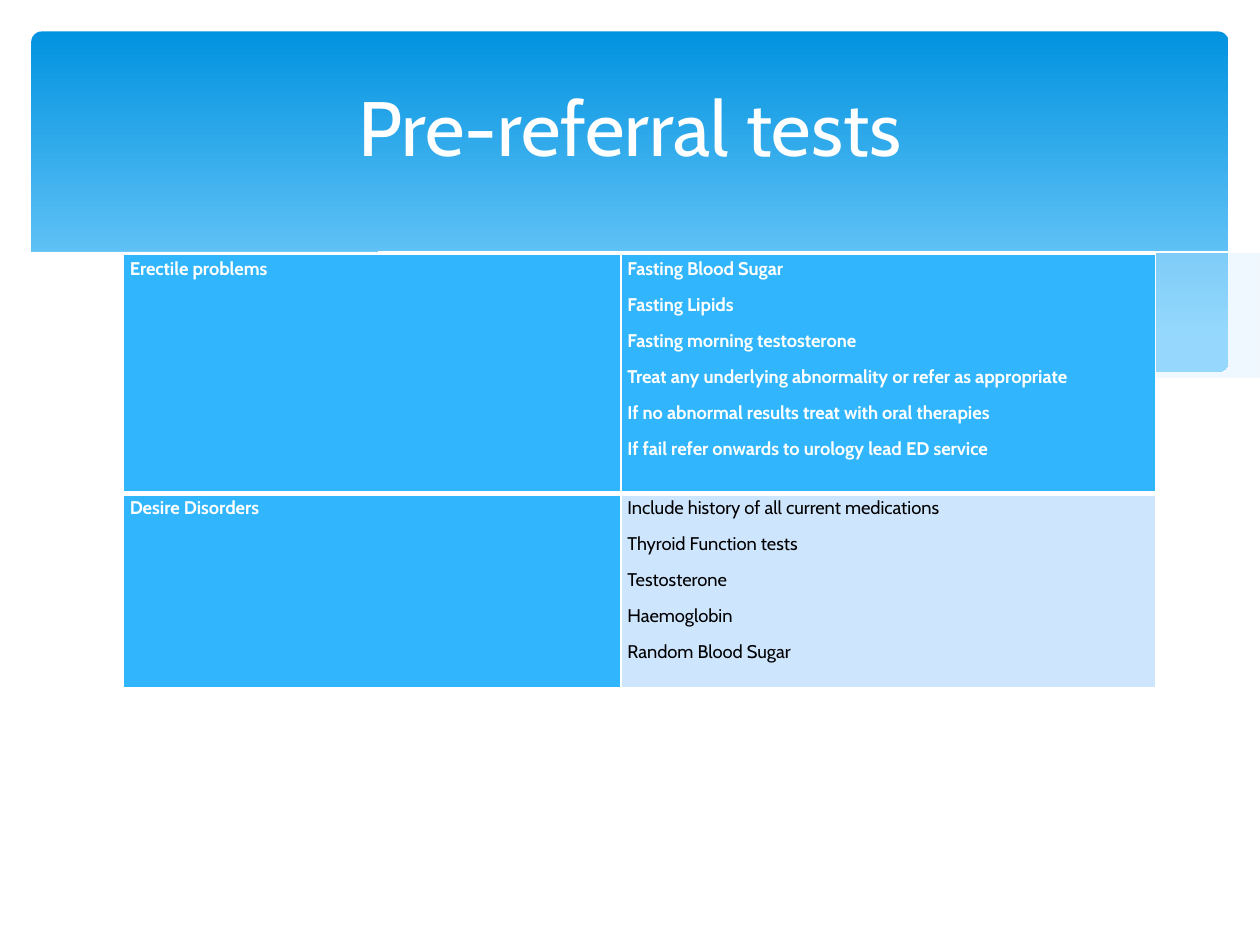
from lxml.etree import SubElement
from pptx import Presentation
from pptx.dml.color import RGBColor
from pptx.enum.shapes import MSO_SHAPE
from pptx.enum.text import MSO_ANCHOR, PP_ALIGN
from pptx.oxml.ns import qn
from pptx.util import Inches, Pt

FONT = "Cabin"
WHITE, BLACK, SKY, PALE, MIST = "FFFFFF", "000000", "31B6FD", "CEE5FE", "C6E7FC"
STEPS = 6


def color(hex_code):
    return RGBColor.from_string(hex_code)


def smooth(knots):
    """Return points of a Catmull-Rom curve through the knots."""
    padded = [knots[0], *knots, knots[-1]]
    points = [knots[0]]
    for a, b, c, d in zip(padded, padded[1:], padded[2:], padded[3:]):
        for step in range(1, STEPS + 1):
            t = step / STEPS
            points.append(tuple(
                (2 * q + (r - p) * t + (2 * p - 5 * q + 4 * r - s) * t**2
                 + (3 * q - p - 3 * r + s) * t**3) / 2
                for p, q, r, s in zip(a, b, c, d)))
    return points


prs = Presentation()
prs.slide_width, prs.slide_height = Inches(10), Inches(7.5)
W, H = prs.slide_width, prs.slide_height
slide = prs.slides.add_slide(prs.slide_layouts[6])
shapes = slide.shapes

# Header band
inset = int(W * 0.025)
band = shapes.add_shape(MSO_SHAPE.ROUNDED_RECTANGLE, inset, inset, W - 2 * inset, int(H * 0.36))
band.adjustments[0] = 0.03
band.shadow.inherit = False
band.line.fill.background()
band.fill.gradient()
band.fill.gradient_angle = 270
for stop, position, shade in zip(band.fill.gradient_stops, (0, 0.9), ("0293E0", "83D3FE")):
    stop.position = position
    stop.color.rgb = color(shade)

# Waves on a grid of 10 columns by 7.5 rows: edges, fill, opacity in percent
waves = [
    ([[(9.76, 2), (9.35, 2.07), (8.61, 2.23), (7.79, 2.42), (7.06, 2.57), (6.61, 2.65)],
      [(6.61, 2.65), (7.19, 2.72), (7.69, 2.77), (8.24, 2.77), (8.72, 2.74), (9.21, 2.65),
       (9.49, 2.57), (9.76, 2.47)]], MIST, 29),
    ([[(8.93, 2.73), (8.37, 2.65), (7.75, 2.54), (7.06, 2.4), (6.29, 2.22), (5.69, 2.08),
       (5.14, 1.98), (4.65, 1.91), (4.2, 1.87), (3.8, 1.85), (3.28, 1.87), (2.86, 1.91)],
      [(2.86, 1.91), (3.42, 1.99), (4.04, 2.11), (4.91, 2.32), (5.66, 2.48), (6.34, 2.61),
       (6.95, 2.7), (7.48, 2.76), (8.07, 2.78), (8.57, 2.77), (8.93, 2.73)]], MIST, 40),
    ([[(3.09, 1.95), (3.44, 1.9), (4.01, 1.87), (4.69, 1.89), (5.33, 1.94), (6.08, 2.04),
       (6.95, 2.19), (7.95, 2.41), (9.07, 2.72)]], None, 100),
    ([[(6.13, 2.57), (6.72, 2.41), (7.48, 2.23), (8.36, 2.04), (8.95, 1.94), (9.38, 1.88),
       (9.75, 1.85)]], None, 100),
    ([[(9.77, 2.46), (9.4, 2.59), (8.99, 2.69), (8.5, 2.75), (8.09, 2.77), (7.61, 2.75),
       (7.08, 2.7), (6.48, 2.62), (5.79, 2.5), (5.03, 2.33), (4.47, 2.2), (3.65, 2.02),
       (2.92, 1.9), (2.3, 1.85), (1.77, 1.84), (1.32, 1.86), (0.95, 1.91), (0.59, 1.99),
       (0.36, 2.07), (0.23, 2.13)],
      [(0.23, 3.29), (9.77, 3.29)]], WHITE, 100),
]
for edges, fill_color, opacity in waves:
    outline = [point for edge in edges for point in smooth(edge)]
    builder = shapes.build_freeform(*outline[0], scale=W / 10)
    builder.add_line_segments(outline[1:], close=fill_color is not None)
    wave = builder.convert_to_shape()
    wave.shadow.inherit = False
    if fill_color is None:
        wave.fill.background()
        wave.line.color.rgb = color(WHITE)
        wave.line.width = Pt(0)
        continue
    wave.line.fill.background()
    wave.fill.solid()
    wave.fill.fore_color.rgb = color(fill_color)
    if opacity < 100:
        tint = wave.fill._xPr.find(qn("a:solidFill"))[0]
        SubElement(tint, qn("a:alpha"), val=str(opacity * 1000))

# Table of tests for each problem
tests = [
    ("Erectile problems", [
        "Fasting Blood Sugar",
        "Fasting Lipids",
        "Fasting morning testosterone",
        "Treat any underlying abnormality or refer as appropriate",
        "If no abnormal results treat with oral therapies",
        "If fail refer onwards to urology lead ED service"]),
    ("Desire Disorders", [
        "Include history of all current medications",
        "Thyroid Function tests",
        "Testosterone",
        "Haemoglobin",
        "Random Blood Sugar"]),
]
column_widths = [int(W * 0.395), int(W * 0.424)]
row_heights = [int(H * 0.253), int(H * 0.206)]
table = shapes.add_table(2, 2, int(W * 0.098), int(H * 0.269),
                         sum(column_widths), sum(row_heights)).table
for column, width in zip(table.columns, column_widths):
    column.width = width
for row, height in zip(table.rows, row_heights):
    row.height = height

for r, (problem, checks) in enumerate(tests):
    for c, lines in enumerate(([problem], checks)):
        cell = table.cell(r, c)
        plain = r == 1 and c == 1
        cell.margin_left = cell.margin_right = Inches(0.05)
        cell.margin_top = cell.margin_bottom = 0
        borders = {"L": 1, "R": 1, "T": 3 if r == 1 else 1, "B": 3 if r == 0 else 1}
        for side, points in borders.items():
            border = SubElement(cell._tc.get_or_add_tcPr(), qn(f"a:ln{side}"), w=str(Pt(points)))
            SubElement(SubElement(border, qn("a:solidFill")), qn("a:srgbClr"), val=WHITE)
        cell.fill.solid()
        cell.fill.fore_color.rgb = color(PALE if plain else SKY)
        cell.text_frame.text = "\n".join(lines)
        for paragraph in cell.text_frame.paragraphs:
            paragraph.line_spacing = 1.15
            paragraph.space_before = Pt(6)
            font = paragraph.runs[0].font
            font.name, font.size, font.bold = FONT, Pt(10.5), not plain
            font.color.rgb = color(BLACK if plain else WHITE)

# Title
title = shapes.add_textbox(int(W * 0.05), int(H * 0.07), int(W * 0.9), int(H * 0.125)).text_frame
title.word_wrap = True
title.vertical_anchor = MSO_ANCHOR.MIDDLE
title.text = "Pre-referral tests"
heading = title.paragraphs[0]
heading.alignment = PP_ALIGN.CENTER
heading_font = heading.runs[0].font
heading_font.name, heading_font.size = FONT, Pt(44)
heading_font.color.rgb = color(WHITE)

prs.save("out.pptx")
